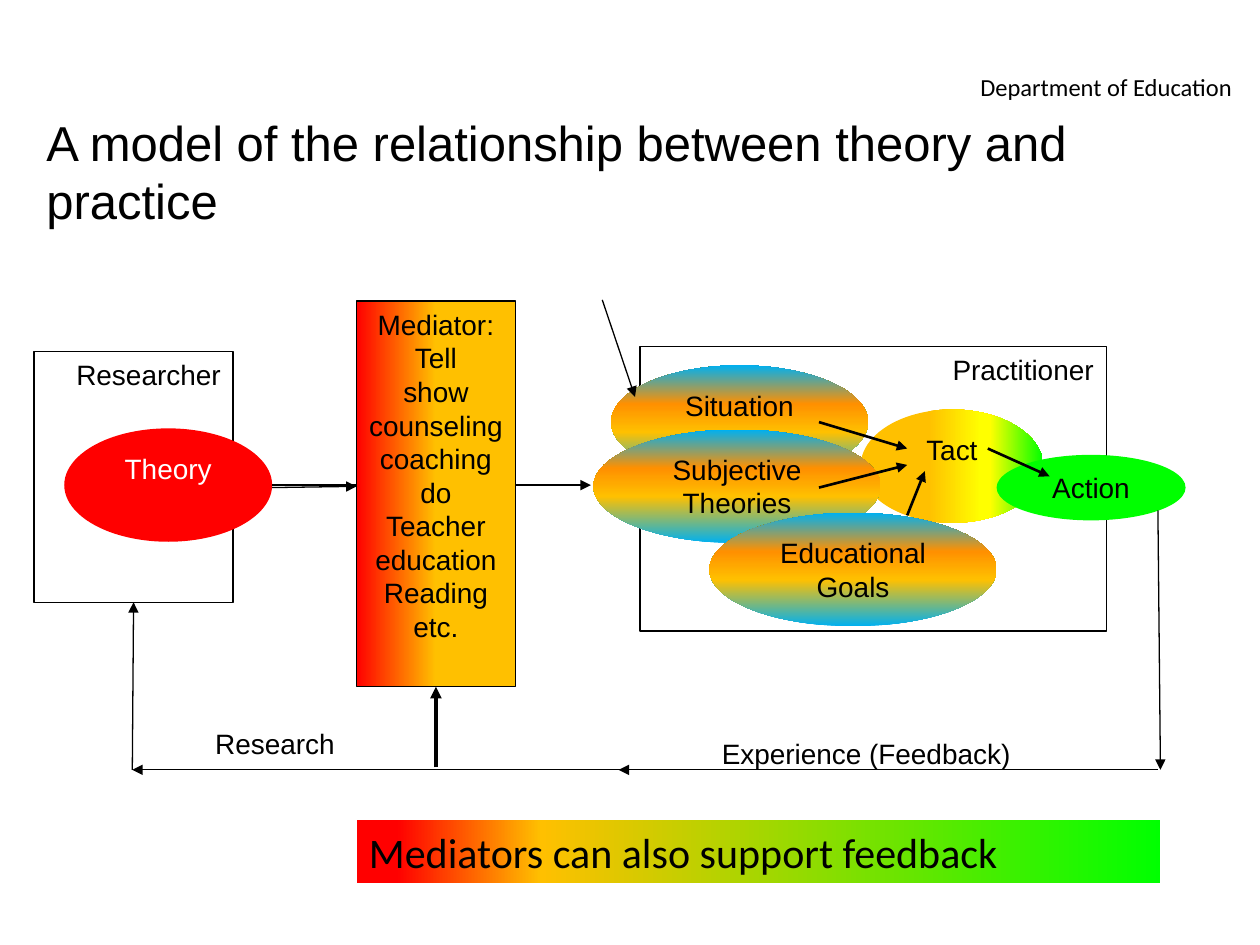
from lxml import etree
from pptx import Presentation
from pptx.dml.color import RGBColor
from pptx.enum.shapes import MSO_CONNECTOR, MSO_SHAPE
from pptx.enum.text import MSO_ANCHOR, PP_ALIGN
from pptx.oxml.ns import qn
from pptx.util import Inches, Pt

RECT, OVAL = MSO_SHAPE.RECTANGLE, MSO_SHAPE.OVAL
LEFT, CENTER, RIGHT = PP_ALIGN.LEFT, PP_ALIGN.CENTER, PP_ALIGN.RIGHT
STRAIGHT = MSO_CONNECTOR.STRAIGHT
TOP = MSO_ANCHOR.TOP

RED, GOLD, GREEN = "FF0000", "FFC000", "00FF00"
BLUE, ORANGE, YELLOW = "00B0F0", "FF9000", "FFFF00"
BLACK, WHITE = "000000", "FFFFFF"
THIN, MEDIUM, THICK = 0.75, 1.5, 2.25

KNOWLEDGE = [(0, BLUE), (41, GOLD), (66, ORANGE), (100, BLUE)]
TACT = [(0, GOLD), (37, GOLD), (66, YELLOW), (71, YELLOW), (100, GREEN)]
MEDIATOR = [(0, RED), (50, GOLD)]
FEEDBACK = [(5, RED), (23, GOLD), (100, GREEN)]


def rgb(value):
    return RGBColor.from_string(value)


class Canvas:
    font = "Arial"
    size = 16

    def __init__(self, slide):
        self.slide = slide

    def set_text(self, s, lines, align, color=BLACK, size=None, font=None, margin=0.1):
        tf = s.text_frame
        tf.word_wrap = True
        tf.vertical_anchor = TOP
        tf.margin_left = tf.margin_right = Inches(margin)
        for i, line in enumerate(lines.split("\n")):
            p = tf.add_paragraph() if i else tf.paragraphs[0]
            p.add_run().text = line
            p.alignment = align
            p.font.name = font or self.font
            p.font.size = Pt(size or self.size)
            p.font.color.rgb = rgb(color)

    def gradient(self, s, stops, angle):
        s.fill.gradient()
        s.fill.gradient_angle = angle
        gs_list = s._element.spPr.find(qn("a:gradFill")).find(qn("a:gsLst"))
        for gs in list(gs_list):
            gs_list.remove(gs)
        for position, color in stops:
            gs = etree.SubElement(gs_list, qn("a:gs"), pos=str(position * 1000))
            etree.SubElement(gs, qn("a:srgbClr"), val=color)

    def shape(self, kind, box, lines, align=CENTER, fill=None, angle=0,
              alpha=None, outline=False, **style):
        s = self.slide.shapes.add_shape(kind, *map(Inches, box))
        s.shadow.inherit = False
        if fill is None:
            s.fill.background()
        elif isinstance(fill, str):
            s.fill.solid()
            s.fill.fore_color.rgb = rgb(fill)
        else:
            self.gradient(s, fill, angle)
        if alpha:
            color = s._element.spPr.find(qn("a:solidFill"))[0]
            etree.SubElement(color, qn("a:alpha"), val=str(alpha * 1000))
        if outline:
            s.line.color.rgb = rgb(BLACK)
            s.line.width = Pt(THIN)
        else:
            s.line.fill.background()
        self.set_text(s, lines, align, **style)

    def text(self, box, lines, align=LEFT, **style):
        s = self.slide.shapes.add_textbox(*map(Inches, box))
        self.set_text(s, lines, align, **style)

    def arrow(self, start, end, width=THIN, head="triangle"):
        s = self.slide.shapes.add_connector(STRAIGHT, *map(Inches, start + end))
        s.line.color.rgb = rgb(BLACK)
        s.line.width = Pt(width)
        spPr = s._element.spPr
        etree.SubElement(spPr.find(qn("a:ln")), qn("a:tailEnd"), type=head)
        etree.SubElement(spPr, qn("a:effectLst"))

    def knowledge(self, box, label):
        self.shape(OVAL, box, label, fill=KNOWLEDGE, angle=90)


def main():
    prs = Presentation()
    prs.slide_width, prs.slide_height = Inches(10), Inches(7.5)
    c = Canvas(prs.slides.add_slide(prs.slide_layouts[6]))

    c.text((7.56, 0.52, 2.44, 0.36), "Department of Education", CENTER,
           size=14, font="Calibri")
    c.arrow((6.97, 3.86), (7.91, 3.87), MEDIUM, "arrow")

    c.shape(RECT, (5.08, 2.75, 3.7, 2.26), "Practitioner", RIGHT, outline=True)
    c.shape(OVAL, (6.83, 3.25, 1.45, 0.9), "Tact", fill=TACT)
    c.knowledge((4.85, 2.9, 2.04, 0.9), "Situation")
    c.shape(OVAL, (7.91, 3.61, 1.5, 0.52), "Action", fill=GREEN)

    c.shape(RECT, (0.27, 2.79, 1.58, 1.99), "Researcher", RIGHT, fill=WHITE,
            alpha=50, outline=True)
    c.shape(OVAL, (0.51, 3.4, 1.65, 0.9), "Theory", fill=RED, color=WHITE)

    c.arrow((2.16, 3.87), (2.83, 3.86))
    c.arrow((2.16, 3.85), (4.69, 3.85))
    c.arrow((9.19, 4.05), (9.21, 6.11))
    c.shape(RECT, (2.83, 2.39, 1.26, 3.06),
            "Mediator:\nTell\nshow\ncounseling\ncoaching\ndo\n"
            "Teacher education\nReading\netc.",
            fill=MEDIATOR, outline=True, margin=0.05)

    for start, end, width in [
        ((9.19, 6.11), (4.91, 6.11), THIN),
        ((3.46, 6.09), (3.46, 5.45), THICK),
        ((4.95, 6.11), (1.05, 6.11), THIN),
        ((1.05, 6.11), (1.06, 4.78), THIN),
        ((4.78, 2.38), (5.04, 3.15), THIN),
    ]:
        c.arrow(start, end, width)

    c.text((5.63, 5.8, 3.15, 0.37), "Experience (Feedback)")
    c.text((1.61, 5.72, 1.44, 0.37), "Research")
    c.knowledge((4.71, 3.41, 2.28, 0.9), "Subjective Theories")
    c.knowledge((5.63, 4.07, 2.28, 0.9), "Educational Goals")

    for start, end in [
        ((7.2, 4.09), (7.34, 3.74)),
        ((6.5, 3.35), (7.2, 3.56)),
        ((6.5, 3.87), (7.2, 3.69)),
        ((7.84, 3.56), (8.33, 3.78)),
    ]:
        c.arrow(start, end, MEDIUM)

    c.shape(RECT, (0.27, 0.84, 9.73, 1.04),
            "A model of the relationship between theory and practice",
            LEFT, fill=WHITE, size=28)
    c.shape(RECT, (2.83, 6.51, 6.38, 0.5), "Mediators can also support feedback",
            LEFT, fill=FEEDBACK, size=24, font="Calibri")

    prs.save("out.pptx")


if __name__ == "__main__":
    main()
